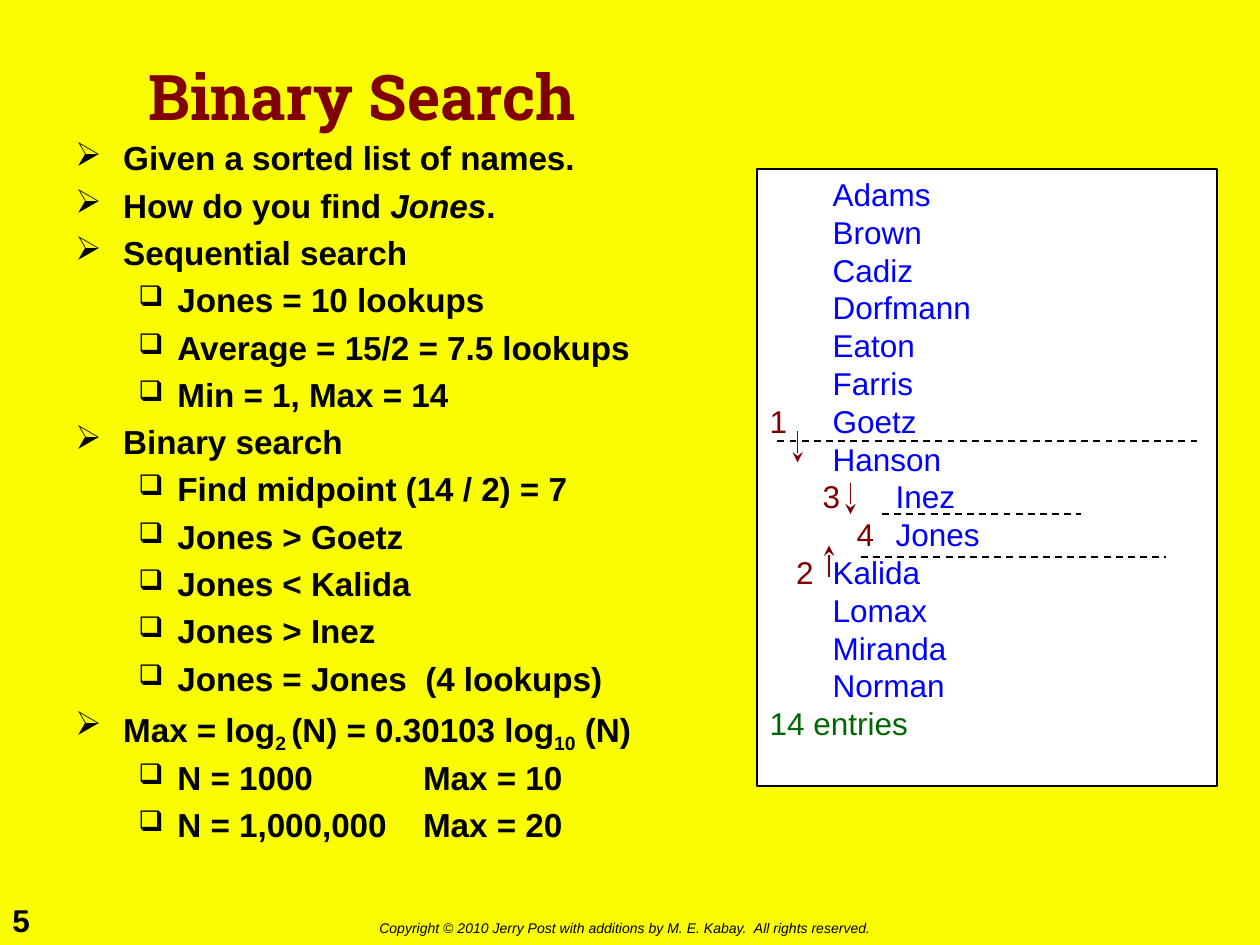
from lxml.etree import SubElement as Sub
from pptx import Presentation
from pptx.dml.color import RGBColor
from pptx.enum.dml import MSO_LINE as Dash
from pptx.enum.shapes import MSO_CONNECTOR as Conn, MSO_SHAPE as Kind
from pptx.enum.text import MSO_ANCHOR as Anchor
from pptx.oxml.ns import qn
from pptx.util import Inches, Pt

BLACK, MAROON, BLUE, GREEN = "000000", "800000", "0000FF", "006600"


def color(code):
    return RGBColor.from_string(code)


def put(par, text, size=18, font="Arial", fill=BLACK, bold=False,
        italic=False, base=0):
    """Add one run of text to a paragraph."""
    run = par.add_run()
    run.text = text
    face = run.font
    face.size, face.name = Pt(size), font
    face.bold, face.italic = bold, italic
    face.color.rgb = color(fill)
    if base:
        run._r.get_or_add_rPr().set("baseline", str(base * 1000))


def frame(shape, pad=True, wrap=True, anchor=Anchor.TOP):
    body = shape.text_frame
    body.word_wrap, body.vertical_anchor = wrap, anchor
    body.margin_left = body.margin_right = Inches(0.1 if pad else 0)
    body.margin_top = body.margin_bottom = Inches(0.05 if pad else 0)
    return body


def area(slide, box, **opts):
    return frame(slide.shapes.add_textbox(*map(Inches, box)), **opts)


def pars(body, items):
    """Yield one paragraph with each item."""
    for i, item in enumerate(items):
        yield (body.add_paragraph() if i else body.paragraphs[0]), item


def indent(par, left, first):
    props = par._p.get_or_add_pPr()
    props.set("marL", str(Inches(left)))
    props.set("indent", str(Inches(first)))
    return props


def tab(props, pos):
    tabs = Sub(props, qn("a:tabLst"))
    Sub(tabs, qn("a:tab"), pos=str(Inches(pos)), algn="l")


def bullet(props, mark, scale):
    tint = Sub(props, qn("a:buClr"))
    Sub(tint, qn("a:srgbClr"), val=BLACK)
    Sub(props, qn("a:buSzPct"), val=str(scale * 1000))
    Sub(props, qn("a:buChar"), char=mark)


def title(slide, box):
    par = area(slide, box, anchor=Anchor.MIDDLE).paragraphs[0]
    par.line_spacing = 0.9
    put(par, "Binary Search", size=36, font="Roboto Slab", fill=MAROON,
        bold=True)


# Each point: level, then plain text or (text, format) runs
POINTS = [
    (0, "Given a sorted list of names."),
    (0, "How do you find ", ("Jones", {"italic": True}), "."),
    (0, "Sequential search"),
    (1, "Jones = 10 lookups"),
    (1, "Average = 15/2 = 7.5 lookups"),
    (1, "Min = 1, Max = 14"),
    (0, "Binary search"),
    (1, "Find midpoint (14 / 2) = 7"),
    (1, "Jones > Goetz"),
    (1, "Jones < Kalida"),
    (1, "Jones > Inez"),
    (1, "Jones = Jones  (4 lookups)"),
    (0, "Max = log", ("2 ", {"base": -25}), "(N) = 0.30103 log",
     ("10", {"base": -25}), " (N)"),
    (1, "N = 1000\tMax = 10"),
    (1, "N = 1,000,000\tMax = 20"),
]
LEVELS = [(0.38, -0.38, "➢", 100), (0.81, -0.31, "❑", 85)]


def points(slide, box):
    for i, (par, (level, *runs)) in enumerate(pars(area(slide, box), POINTS)):
        left, first, mark, scale = LEVELS[level]
        par.level = level
        props = indent(par, left, first)
        bullet(props, mark, scale)
        tab(props, 2.76)
        par.line_spacing = 0.9
        par.space_before = Pt(6.5 if i else 0)
        for run in runs:
            text, fmt = (run, {}) if isinstance(run, str) else run
            put(par, text, size=19, bold=True, **fmt)


def line(slide, start, end, fill=BLACK, dash=False, arrow=False):
    link = slide.shapes.add_connector(
        Conn.STRAIGHT, *map(Inches, (*start, *end)))
    link.line.width = Pt(1)
    link.line.color.rgb = color(fill)
    if dash:
        link.line.dash_style = Dash.DASH
    if arrow:
        Sub(link.line._get_or_add_ln(), qn("a:tailEnd"), type="stealth")
    Sub(link._element.spPr, qn("a:effectLst"))


NAMES = ["Adams", "Brown", "Cadiz", "Dorfmann", "Eaton", "Farris", "Goetz",
         "Hanson", "Inez", "Jones", "Kalida", "Lomax", "Miranda", "Norman"]
# Lookup number and its indent, by name
STEPS = {"Goetz": ("1", 0), "Kalida": ("2", 0.21),
         "Inez": ("3", 0.42), "Jones": ("4", 0.69)}
# Split lines: left, right, height
SPLITS = [(0.16, 3.49, 2.16), (0.82, 3.24, 3.08), (0.99, 2.57, 2.74)]
# Arrows: across, from, to
ARROWS = [(0.32, 2.08, 2.33), (0.57, 3.24, 2.99), (0.74, 2.49, 2.74)]


def names(slide, box):
    x, y = box[:2]
    panel = slide.shapes.add_shape(Kind.RECTANGLE, *map(Inches, box))
    panel.shadow.inherit = False
    panel.fill.solid()
    panel.fill.fore_color.rgb = color("FFFFFF")
    panel.line.color.rgb = color(BLACK)
    panel.line.width = Pt(1)

    # Sorted list with lookup numbers
    for par, name in pars(frame(panel), NAMES + ["14 entries"]):
        step, first = STEPS.get(name, ("", 0))
        tab(indent(par, 0, first), 1.01)
        par.alignment = 1
        par.line_spacing = Pt(21.6)
        if step:
            put(par, step, fill=MAROON)
        if name in NAMES:
            put(par, "\t" + name, fill=BLUE)
        else:
            put(par, name, fill=GREEN)

    # Splits of the list and direction of each next lookup
    for left, right, at in SPLITS:
        line(slide, (x + left, y + at), (x + right, y + at), dash=True)
    for at, top, end in ARROWS:
        line(slide, (x + at, y + top), (x + at, y + end), fill=MAROON,
             arrow=True)


def footer(slide, box):
    x, y, w, h = box
    page = area(slide, (x, y, 0.51, h), wrap=False)
    put(page.paragraphs[0], "5", bold=True)
    note = area(slide, (x + 2.92, y + 0.15, 4.22, 0.24), pad=False)
    note.margin_left = Inches(0.09)
    note.margin_top = Inches(0.05)
    note.word_wrap = False
    put(note.paragraphs[0], "Copyright © 2010 Jerry Post with additions by "
        "M. E. Kabay.  All rights reserved.", size=8, italic=True)


def main():
    deck = Presentation()
    deck.slide_width, deck.slide_height = Inches(10), Inches(7.5)
    slide = deck.slides.add_slide(deck.slide_layouts[6])
    slide.background.fill.solid()
    slide.background.fill.fore_color.rgb = color("FAFD00")
    footer(slide, (0, 7.1, 10, 0.4))
    title(slide, (1.08, 0.17, 7.83, 1.25))
    points(slide, (0.5, 1.08, 5.33, 6.25))
    names(slide, (6.01, 1.34, 3.65, 4.9))
    deck.save("out.pptx")


if __name__ == "__main__":
    main()
